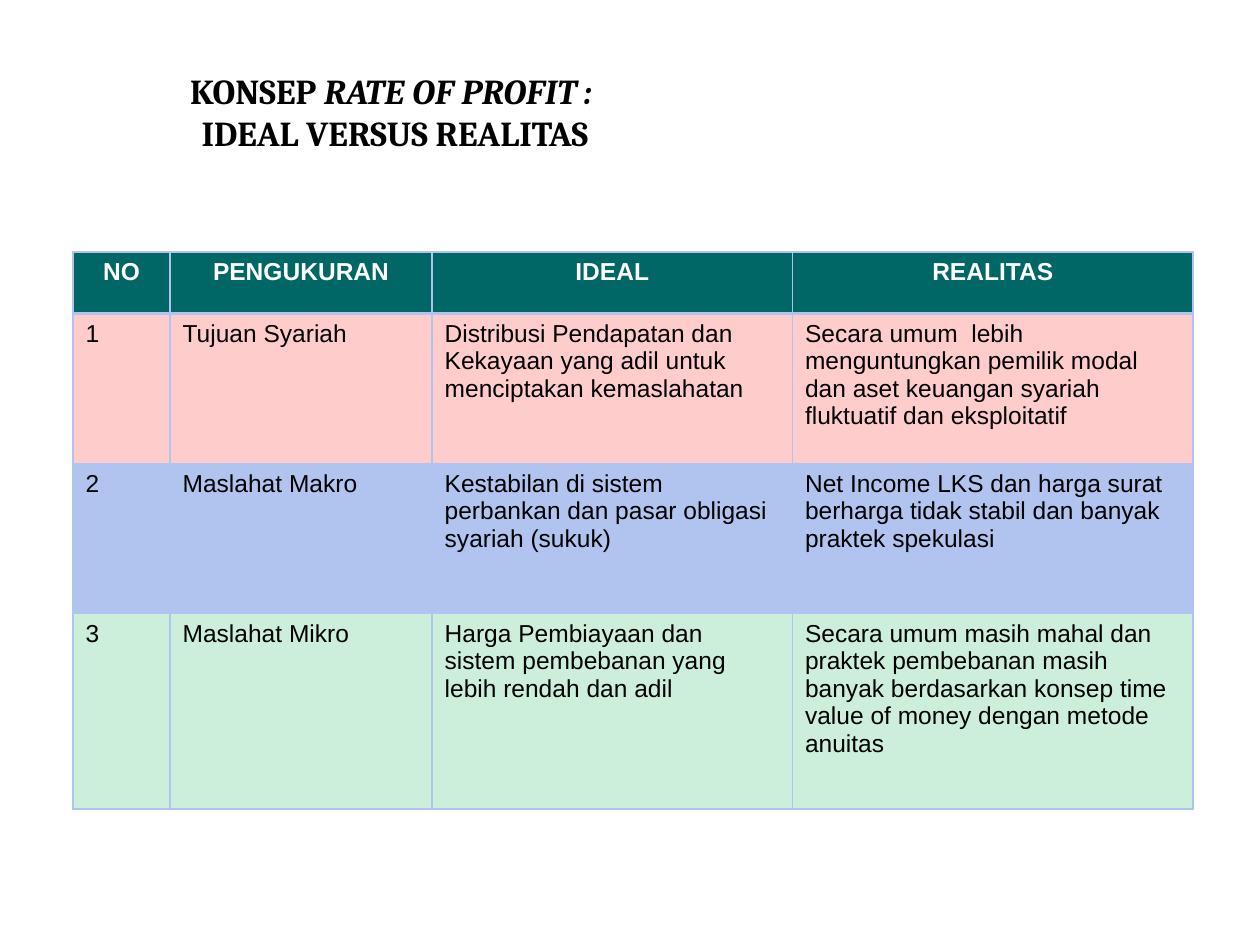
from lxml.etree import SubElement
from pptx import Presentation
from pptx.dml.color import RGBColor
from pptx.enum.text import MSO_AUTO_SIZE, PP_ALIGN
from pptx.oxml.ns import qn
from pptx.util import Inches, Pt

COLORS = {"text": "000000", "header": "006666", "white": "FFFFFF", "red": "FF0000",
          "blue": "B1C3EF", "green": "00B050"}
COLUMN_WIDTHS = [0.77, 2.08, 2.86, 3.18]
HEADINGS = ["NO", "PENGUKURAN", "IDEAL", "REALITAS"]
BODY_ROWS = [
    (1.19, "red", 20, ["1", "Tujuan Syariah",
        ["Distribusi Pendapatan dan Kekayaan yang adil untuk menciptakan kemaslahatan"],
        ["Secara umum  lebih menguntungkan pemilik modal dan aset keuangan syariah "
         "fluktuatif dan eksploitatif"]]),
    (1.19, "blue", 100, ["2", "Maslahat Makro",
        ["Kestabilan di sistem perbankan dan pasar obligasi", "syariah (sukuk)"],
        ["Net Income LKS dan harga surat berharga tidak stabil dan banyak praktek spekulasi"]]),
    (1.55, "green", 20, ["3", "Maslahat Mikro",
        ["Harga Pembiayaan dan sistem pembebanan yang lebih rendah dan adil"],
        ["Secara umum masih mahal dan praktek pembebanan masih banyak berdasarkan konsep "
         "time value of money dengan metode anuitas"]]),
]


class SlideBuilder:
    """Holds the style and the current slide, and draws titles and tables on it."""

    def __init__(self, presentation):
        self.width, self.height = presentation.slide_width, presentation.slide_height
        self.slide = presentation.slides.add_slide(presentation.slide_layouts[6])

    def frame(self, left, top, width, height):
        return (round(left * self.width), round(top * self.height),
                round(width * self.width), round(height * self.height))

    def add_text(self, text_frame, paragraphs, font, size, color, bold, align):
        for index, runs in enumerate(paragraphs):
            paragraph = text_frame.paragraphs[0] if index == 0 else text_frame.add_paragraph()
            paragraph.alignment = align
            for text, italic in runs:
                run = paragraph.add_run()
                run.text = text
                run.font.name, run.font.size = font, Pt(size)
                run.font.bold, run.font.italic = bold, italic
                run.font.color.rgb = RGBColor.from_string(COLORS[color])

    def title(self, area, paragraphs):
        text_frame = self.slide.shapes.add_textbox(*self.frame(*area)).text_frame
        text_frame.word_wrap = True
        text_frame.auto_size = MSO_AUTO_SIZE.SHAPE_TO_FIT_TEXT
        self.add_text(text_frame, paragraphs, "Cambria", 20, "text", True, PP_ALIGN.CENTER)

    def border(self, cell, side, points):
        properties = cell._tc.get_or_add_tcPr()
        line = SubElement(properties, qn(f"a:ln{side}"), w=str(Pt(points)))
        fill = SubElement(line, qn("a:solidFill"))
        SubElement(fill, qn("a:srgbClr"), val=COLORS["blue"])

    def cell(self, cell, paragraphs, fill, opacity, is_header, below_header):
        for side in "LRTB":
            thick = (is_header and side == "B") or (below_header and side == "T")
            self.border(cell, side, 2 if thick else 1)
        cell.fill.solid()
        cell.fill.fore_color.rgb = RGBColor.from_string(COLORS[fill])
        if opacity < 100:
            color = cell._tc.tcPr.find(qn("a:solidFill")).find(qn("a:srgbClr"))
            SubElement(color, qn("a:alpha"), val=str(opacity * 1000))
        self.add_text(cell.text_frame, [[(text, False)] for text in paragraphs], "Arial", 14,
                      "white" if is_header else "text", is_header,
                      PP_ALIGN.CENTER if is_header else PP_ALIGN.LEFT)

    def table(self, area, column_widths, rows):
        table = self.slide.shapes.add_table(
            len(rows), len(column_widths), *self.frame(*area)).table
        for column, width in zip(table.columns, column_widths):
            column.width = Inches(width)
        for row_index, (height, fill, opacity, entries) in enumerate(rows):
            table.rows[row_index].height = Inches(height)
            for column_index, entry in enumerate(entries):
                paragraphs = [entry] if isinstance(entry, str) else entry
                self.cell(table.cell(row_index, column_index), paragraphs, fill, opacity,
                          row_index == 0, row_index == 1)


def main():
    presentation = Presentation()
    presentation.slide_width, presentation.slide_height = Inches(10), Inches(7.5)
    builder = SlideBuilder(presentation)
    rows = [(0.49, "header", 100, HEADINGS)] + BODY_ROWS
    builder.table((0.058, 2 / 7.5, 0.889, 4.42 / 7.5), COLUMN_WIDTHS, rows)
    builder.title((0.026, 0.5 / 7.5, 0.575, 0.77 / 7.5), [
        [("KONSEP ", False), ("RATE OF PROFIT : ", True)],
        [("IDEAL VERSUS REALITAS", False)],
    ])
    presentation.save("out.pptx")


if __name__ == "__main__":
    main()
